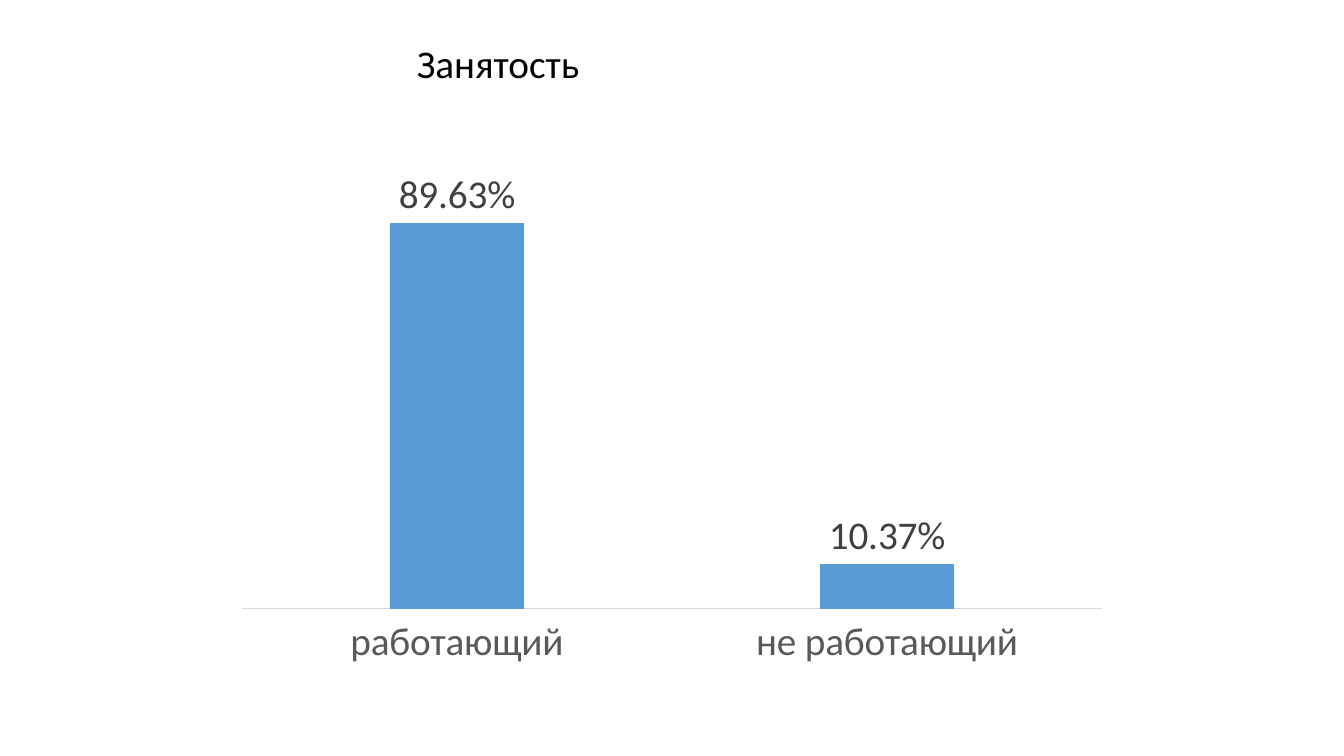
from pptx import Presentation
from pptx.chart.data import CategoryChartData
from pptx.dml.color import RGBColor
from pptx.enum.chart import XL_CHART_TYPE, XL_LABEL_POSITION, XL_TICK_LABEL_POSITION, XL_TICK_MARK
from pptx.enum.text import MSO_AUTO_SIZE
from pptx.util import Emu, Pt

COLORS = {
    "text": "000000",
    "bar": "5B9BD5",
    "label": "404040",
    "category": "595959",
    "axis": "D9D9D9",
}
FONT = {"name": "Calibri", "size": Pt(28), "bold": False}
PERCENT = "0.00%"
EMPLOYMENT = {"работающий": 0.8963, "не работающий": 0.1037}


def px(n):
    return Emu(round(n * 914400 / 100.8))


def rgb(name):
    return RGBColor.from_string(COLORS[name])


def set_attrs(obj, values):
    for key, value in values.items():
        setattr(obj, key, value)


def set_font(font, color):
    set_attrs(font, FONT)
    font.color.rgb = rgb(color)


def add_title(s, text, x, y, w, h):
    tf = s.shapes.add_textbox(px(x), px(y), px(w), px(h)).text_frame
    set_attrs(tf, {"word_wrap": True, "auto_size": MSO_AUTO_SIZE.SHAPE_TO_FIT_TEXT})
    r = tf.paragraphs[0].add_run()
    r.text = text
    set_font(r.font, "text")


def add_column_chart(s, shares, x, y, w, h):
    data = CategoryChartData(number_format=PERCENT)
    data.categories = list(shares)
    data.add_series("Series 1", list(shares.values()))
    chart = s.shapes.add_chart(
        XL_CHART_TYPE.COLUMN_CLUSTERED, px(x), px(y), px(w), px(h), data
    ).chart
    set_attrs(chart, {"has_title": False, "has_legend": False})
    set_font(chart.font, "text")

    # Columns
    plot = chart.plots[0]
    set_attrs(plot, {"gap_width": 219, "overlap": -27,
                     "vary_by_categories": False, "has_data_labels": True})
    fill = plot.series[0].format.fill
    fill.solid()
    fill.fore_color.rgb = rgb("bar")

    # Value labels
    labels = plot.data_labels
    set_attrs(labels, {"show_value": True, "position": XL_LABEL_POSITION.OUTSIDE_END,
                       "number_format": PERCENT, "number_format_is_linked": False})
    set_font(labels.font, "label")

    # Category axis
    axis = chart.category_axis
    set_attrs(axis, {"major_tick_mark": XL_TICK_MARK.NONE,
                     "minor_tick_mark": XL_TICK_MARK.NONE,
                     "tick_label_position": XL_TICK_LABEL_POSITION.LOW,
                     "has_major_gridlines": False})
    set_font(axis.tick_labels.font, "category")
    axis.format.line.width = Pt(0.75)
    axis.format.line.color.rgb = rgb("axis")

    # Hidden value axis
    set_attrs(chart.value_axis, {"visible": False, "has_major_gridlines": False,
                                 "minimum_scale": 0, "maximum_scale": 1})
    set_attrs(chart.value_axis.tick_labels,
              {"number_format": PERCENT, "number_format_is_linked": False})


def main():
    prs = Presentation()
    set_attrs(prs, {"slide_width": px(1344), "slide_height": px(756)})
    s = prs.slides.add_slide(prs.slide_layouts[6])
    add_column_chart(s, EMPLOYMENT, 224, 168, 896, 508)
    add_title(s, "Занятость", 407, 34, 413, 57)
    prs.save("out.pptx")


if __name__ == "__main__":
    main()
